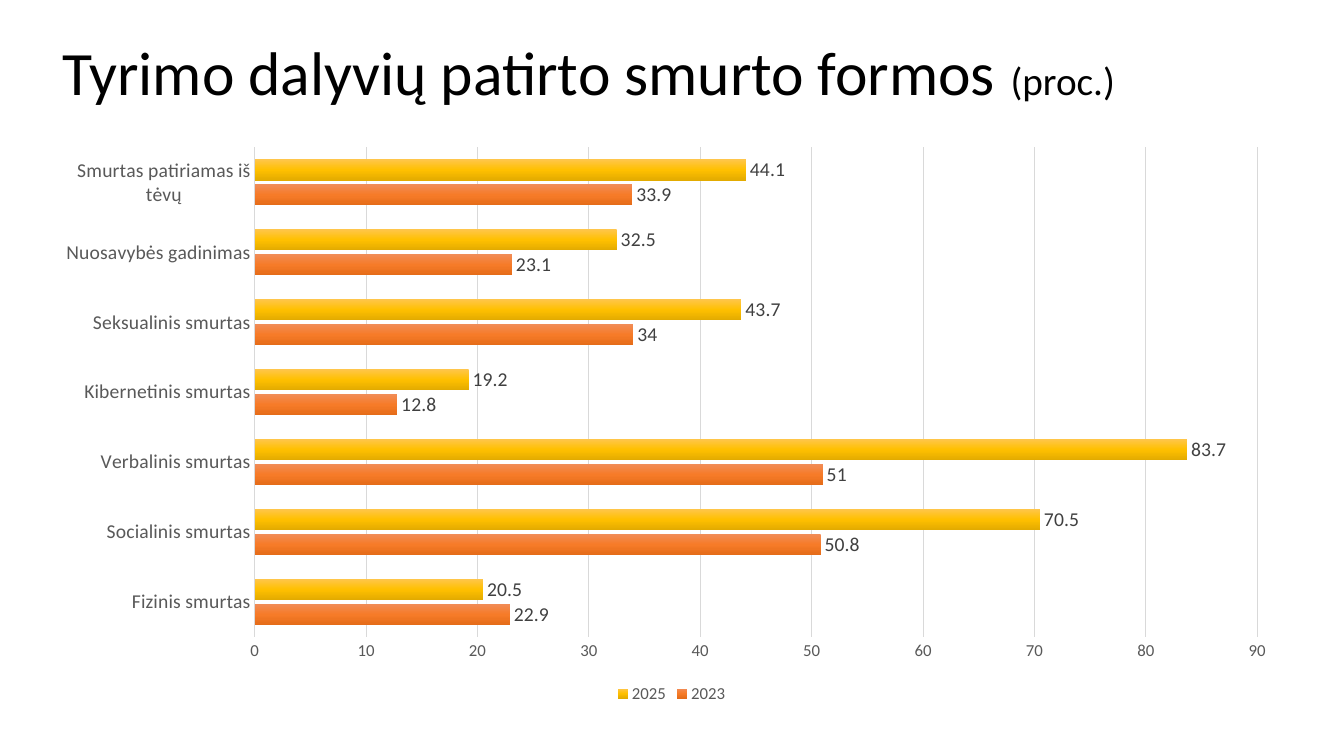
from dataclasses import dataclass

from lxml import etree
from pptx import Presentation
from pptx.chart.data import CategoryChartData
from pptx.dml.color import RGBColor
from pptx.enum.chart import XL_CHART_TYPE, XL_LABEL_POSITION, XL_LEGEND_POSITION, XL_TICK_MARK
from pptx.enum.text import MSO_ANCHOR
from pptx.oxml.ns import qn
from pptx.util import Inches, Pt

BAR_CLUSTERED = XL_CHART_TYPE.BAR_CLUSTERED
OUTSIDE_END = XL_LABEL_POSITION.OUTSIDE_END
LEGEND_BOTTOM = XL_LEGEND_POSITION.BOTTOM
NO_TICK = XL_TICK_MARK.NONE
MIDDLE = MSO_ANCHOR.MIDDLE


@dataclass(frozen=True)
class Theme:
    font: str = "Calibri"
    title: str = "000000"
    axis_text: str = "595959"
    value_text: str = "404040"
    grid: str = "D9D9D9"
    orange: tuple = ("F18C57", "F67B28", "E56C19")
    yellow: tuple = ("FFC64B", "FFC000", "E3AB00")
    title_size: int = 44
    unit_size: int = 28
    label_size: int = 14
    scale_size: int = 12
    chart_size: int = 10


theme = Theme()

FORMS = ["Fizinis smurtas", "Socialinis smurtas", "Verbalinis smurtas",
         "Kibernetinis smurtas", "Seksualinis smurtas",
         "Nuosavybės gadinimas", "Smurtas patiriamas iš tėvų"]
YEARS = [
    ("2023", (22.9, 50.8, 51, 12.8, 34, 23.1, 33.9), theme.orange),
    ("2025", (20.5, 70.5, 83.7, 19.2, 43.7, 32.5, 44.1), theme.yellow),
]


def style_font(font, size, color):
    font.name = theme.font
    font.size = Pt(size)
    font.bold = False
    font.color.rgb = RGBColor.from_string(color)


def fill_gradient(series, colors):
    """Fill the bars from top to bottom with evenly spaced colour stops."""
    fill = series.format.fill
    fill.gradient()
    fill.gradient_angle = 270  # counter-clockwise, so this points down
    stops = next(series._element.iter(qn("a:gsLst")))
    for stop in list(stops):
        stops.remove(stop)
    for index, color in enumerate(colors):
        position = 100000 * index // (len(colors) - 1)
        stop = etree.SubElement(stops, qn("a:gs"), pos=str(position))
        etree.SubElement(stop, qn("a:srgbClr"), val=color)


prs = Presentation()
prs.slide_width = Inches(13.33)
prs.slide_height = Inches(7.5)
slide = prs.slides.add_slide(prs.slide_layouts[6])

# Title
title = slide.shapes.add_textbox(Inches(0.52), Inches(0.32), Inches(10.97), Inches(0.85))
title.text_frame.word_wrap = True
title.text_frame.vertical_anchor = MIDDLE
heading = title.text_frame.paragraphs[0]
heading.line_spacing = 0.9
for words, size in (("Tyrimo dalyvių patirto smurto formos ", theme.title_size),
                    ("(proc.)", theme.unit_size)):
    run = heading.add_run()
    run.text = words
    style_font(run.font, size, theme.title)

# Chart
survey = CategoryChartData()
survey.categories = FORMS
for year, shares, _ in YEARS:
    survey.add_series(year, shares)
chart = slide.shapes.add_chart(BAR_CLUSTERED, Inches(0.52), Inches(1.35),
                               Inches(12.28), Inches(5.67), survey).chart
style_font(chart.font, theme.chart_size, theme.title)
chart.has_title = False
chart.has_legend = True
chart.legend.position = LEGEND_BOTTOM
chart.legend.include_in_layout = False
style_font(chart.legend.font, theme.scale_size, theme.axis_text)

bars = chart.plots[0]
bars.gap_width = 115
bars.overlap = -20
bars.vary_by_categories = False
for series, (_, _, colors) in zip(bars.series, YEARS):
    fill_gradient(series, colors)
    labels = series.data_labels
    labels.show_value = True
    labels.position = OUTSIDE_END
    style_font(labels.font, theme.label_size, theme.value_text)

# Axes
form_axis, share_axis = chart.category_axis, chart.value_axis
for axis, size in ((form_axis, theme.label_size), (share_axis, theme.scale_size)):
    axis.major_tick_mark = NO_TICK
    axis.minor_tick_mark = NO_TICK
    style_font(axis.tick_labels.font, size, theme.axis_text)
form_axis.format.line.color.rgb = RGBColor.from_string(theme.grid)
form_axis.format.line.width = Pt(1)
share_axis.minimum_scale = 0
share_axis.maximum_scale = 90
share_axis.major_unit = 10
share_axis.format.line.fill.background()
share_axis.has_major_gridlines = True
grid_line = share_axis.major_gridlines.format.line
grid_line.color.rgb = RGBColor.from_string(theme.grid)
grid_line.width = Pt(0.75)

prs.save("out.pptx")
